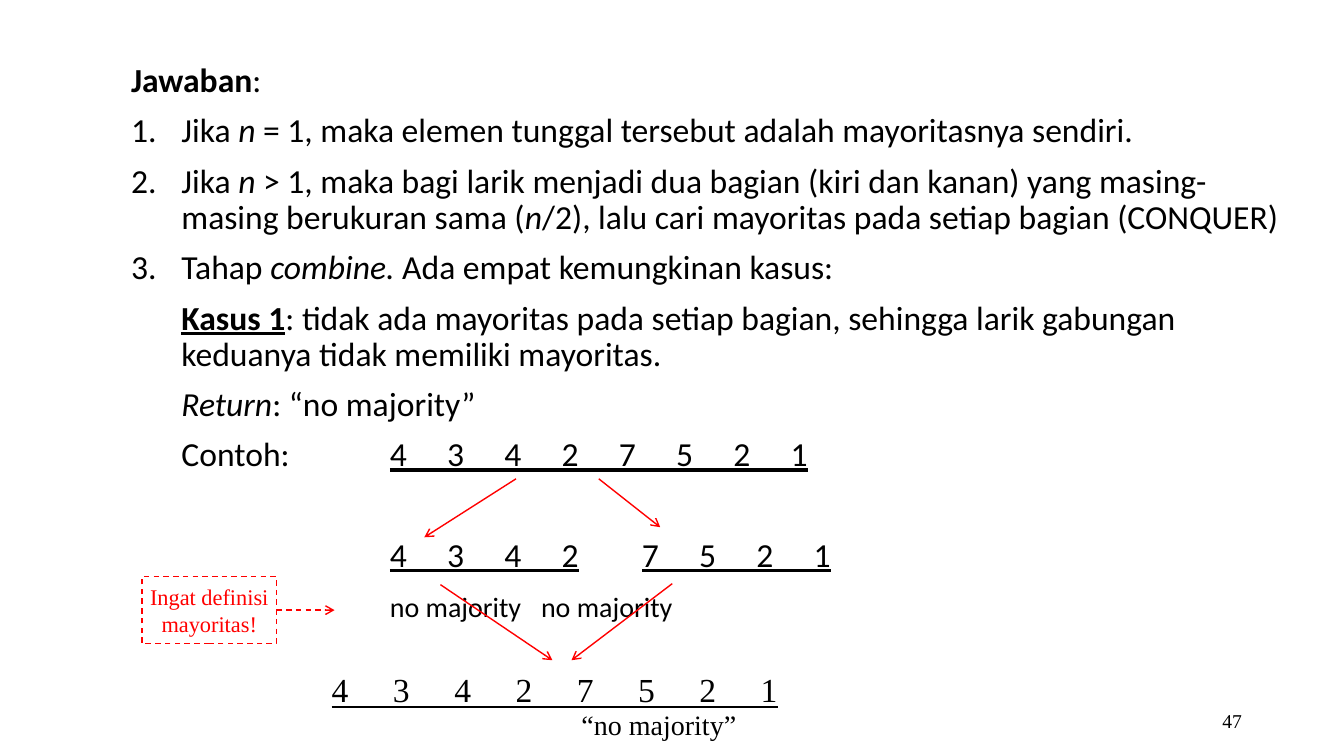
from pptx import Presentation
from pptx.enum import dml, shapes, text
from pptx.oxml.ns import qn
from pptx import util as u
from pptx.dml.color import RGBColor
from lxml import etree

Pt = u.Pt
COLORS = {"ink": "000000", "accent": "FF0000"}
BODY_FONT, NOTE_FONT = "Calibri", "Times New Roman"

LEFT_HALF, RIGHT_HALF = "4 3 4 2", "7 5 2 1"
WHOLE = LEFT_HALF + " " + RIGHT_HALF
BODY_TRACKING, SUM_TRACKING = 11.67, 12.9  # letter spacing of the digit rows

# Each paragraph: its layout, then runs of (text, style letters):
# b bold, i italic, u underlined, s small, w widely spaced
ANSWER = [
    ({"before": 0}, [("Jawaban", "b"), (":", "")]),
    ({"margin": 36, "numbered": True},
     [("Jika ", ""), ("n", "i"), (" = 1, maka elemen tunggal tersebut adalah mayoritasnya sendiri.", "")]),
    ({"margin": 36, "numbered": True},
     [("Jika ", ""), ("n ", "i"),
      ("> 1, maka bagi larik menjadi dua bagian (kiri dan kanan) yang masing-masing berukuran sama (", ""),
      ("n", "i"), ("/2), lalu cari mayoritas pada setiap bagian (CONQUER)", "")]),
    ({"margin": 36, "numbered": True},
     [("Tahap ", ""), ("combine. ", "i"), ("Ada empat kemungkinan kasus:", "")]),
    ({"margin": 36},
     [("Kasus 1", "bu"),
      (": tidak ada mayoritas pada setiap bagian, sehingga larik gabungan keduanya tidak memiliki mayoritas.", "")]),
    ({"margin": 36}, [("Return", "i"), (": “no majority”", "")]),
    ({"margin": 36}, [("Contoh:", "")]),
]
EXAMPLE = [
    ({"before": 0}, [(WHOLE, "uw")]),
    ({"stop": 163.7, "before": 46}, [(LEFT_HALF, "uw"), ("\t", ""), (RIGHT_HALF, "uw")]),
    ({"stop": 192.9}, [("no majority", "s"), ("\t", ""), ("no majority", "s")]),
]

# Arrow ends: (x1, y1, x2, y2)
ARROWS = [
    (368.6, 342, 303.1, 383.8),
    (427.7, 342, 471.6, 376.6),
    (314.6, 417.6, 394.6, 471.6),
    (480.2, 416.9, 408.2, 471.6),
]


def color(name):
    return RGBColor.from_string(COLORS[name])


def add_run(para, words, style="", size=24, font=BODY_FONT, ink="ink", tracking=BODY_TRACKING):
    span = para.add_run()
    span.text = words
    span.font.size, span.font.name = Pt(size), font
    span.font.color.rgb = color(ink)
    span.font.bold, span.font.italic = "b" in style, "i" in style
    span.font.underline = "u" in style
    if "w" in style:
        span._r.get_or_add_rPr().set("spc", str(round(tracking * 100)))


def fill_frame(frame, paragraphs):
    frame.word_wrap = True
    frame.auto_size = text.MSO_AUTO_SIZE.NONE
    frame.vertical_anchor = text.MSO_ANCHOR.TOP
    for index, (look, runs) in enumerate(paragraphs):
        para = frame.add_paragraph() if index else frame.paragraphs[0]
        margin, numbered = look.get("margin", 0), look.get("numbered", False)
        props = para._p.get_or_add_pPr()
        props.set("marL", str(int(Pt(margin))))
        props.set("indent", str(-int(Pt(margin)) if numbered else 0))
        if numbered:
            etree.SubElement(props, qn("a:buFont"), typeface="+mj-lt")
            etree.SubElement(props, qn("a:buAutoNum"), type="arabicPeriod")
        else:
            etree.SubElement(props, qn("a:buNone"))
        if "stop" in look:
            stops = etree.SubElement(props, qn("a:tabLst"))
            etree.SubElement(stops, qn("a:tab"), pos=str(int(Pt(look["stop"]))), algn="l")
        para.line_spacing = 0.9
        para.space_before = Pt(look.get("before", 10))
        for words, style in runs:
            add_run(para, words, style, 20 if "s" in style else 24)


def add_label(page, left, top, width, height):
    box = page.shapes.add_textbox(Pt(left), Pt(top), Pt(width), Pt(height))
    box.text_frame.word_wrap = True
    return box.text_frame


def add_arrow(page, x1, y1, x2, y2):
    arrow = page.shapes.add_connector(
        shapes.MSO_CONNECTOR.STRAIGHT, Pt(x1), Pt(y1), Pt(x2), Pt(y2))
    arrow.line.color.rgb = color("accent")
    arrow.line.width = Pt(1)
    etree.SubElement(arrow.line._get_or_add_ln(), qn("a:tailEnd"), type="arrow")
    etree.SubElement(arrow._element.spPr, qn("a:effectLst"))
    return arrow


def add_reminder(page):
    box = page.shapes.add_shape(
        shapes.MSO_SHAPE.RECTANGLE, Pt(101.5), Pt(411.8), Pt(96), Pt(48))
    box.shadow.inherit = False
    box.fill.background()
    box.line.color.rgb = color("accent")
    box.line.width = Pt(1)
    box.line.dash_style = dml.MSO_LINE.DASH
    frame = box.text_frame
    frame.word_wrap = False
    frame.vertical_anchor = text.MSO_ANCHOR.MIDDLE
    for index, words in enumerate(["Ingat definisi", "mayoritas!"]):
        para = frame.add_paragraph() if index else frame.paragraphs[0]
        para.alignment = text.PP_ALIGN.CENTER
        add_run(para, words, size=16, font=NOTE_FONT, ink="accent")
    pointer = add_arrow(page, 197.5, 435.8, 239, 435.8)
    pointer.begin_connect(box, 3)
    pointer.line.dash_style = dml.MSO_LINE.DASH


def main():
    deck = Presentation()
    deck.slide_width, deck.slide_height = Pt(960), Pt(540)
    page = deck.slides.add_slide(deck.slide_layouts[1])
    title = page.shapes.title._element
    title.getparent().remove(title)

    body = page.placeholders[1]
    body.left, body.top, body.width, body.height = Pt(86.4), Pt(41.8), Pt(845.3), Pt(437.8)
    fill_frame(body.text_frame, ANSWER)
    fill_frame(add_label(page, 271.4, 309, 340, 150), EXAMPLE)

    number = add_label(page, 678.2, 500.4, 216, 28.8)
    number.vertical_anchor = text.MSO_ANCHOR.MIDDLE
    number.paragraphs[0].alignment = text.PP_ALIGN.RIGHT
    add_run(number.paragraphs[0], "47", size=14, font=NOTE_FONT)

    for ends in ARROWS:
        add_arrow(page, *ends)
    add_reminder(page)

    merged = add_label(page, 229.9, 474.5, 360, 36.7).paragraphs[0]
    add_run(merged, WHOLE, "uw", font=NOTE_FONT, tracking=SUM_TRACKING)

    result = add_label(page, 408.2, 501.8, 126, 31.7).paragraphs[0]
    add_run(result, "“no majority”", size=20, font=NOTE_FONT)

    deck.save("out.pptx")


if __name__ == "__main__":
    main()
